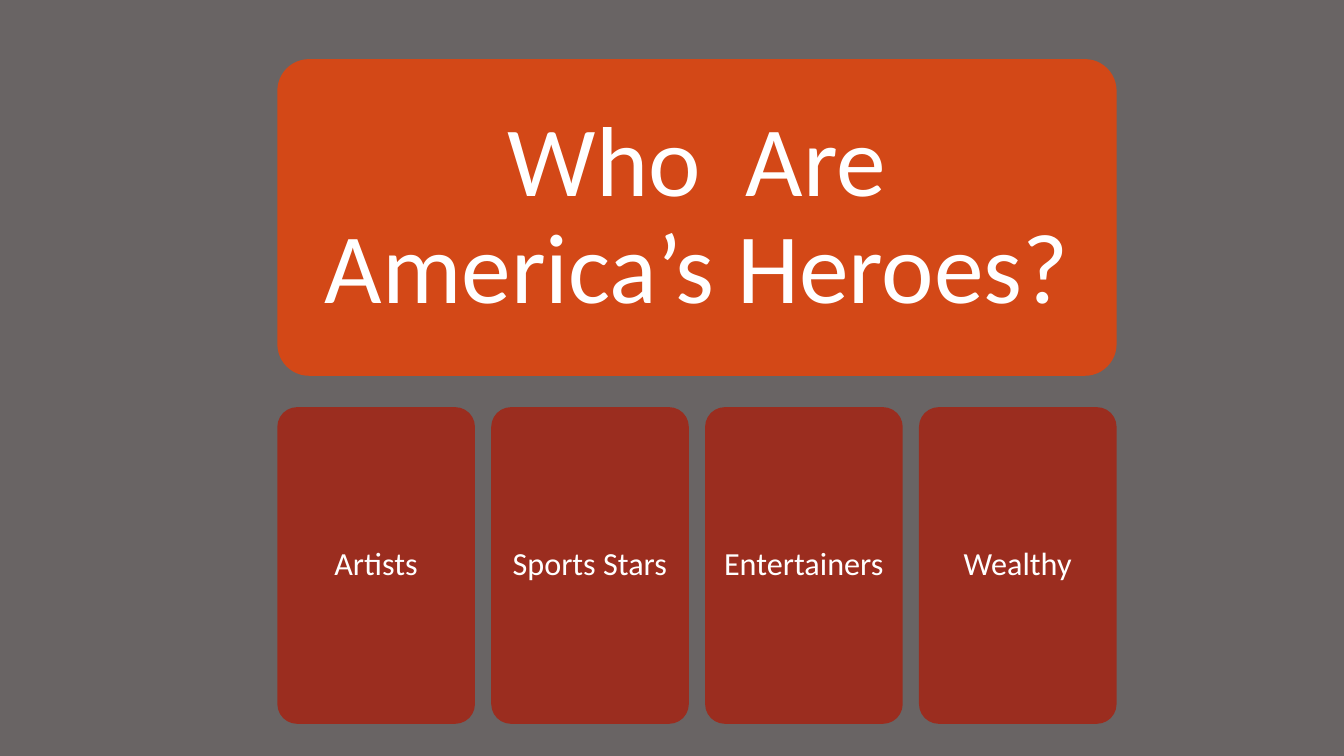
from pptx import Presentation
from pptx.dml.color import RGBColor
from pptx.enum import shapes, text
from pptx.util import Cm, Pt

TITLE = "Who  Are America’s Heroes?"
HEROES = ["Artists", "Sports Stars", "Entertainers", "Wealthy"]
COLORS = {"background": "696464", "banner": "D34817", "card": "9B2D1F", "text": "FFFFFF"}

LEFT, WIDTH, HEIGHT = 6.99, 21.15, 7.98
BANNER_TOP, CARD_TOP = 1.49, 10.26
GAP = 0.41
CARD_WIDTH = (WIDTH - GAP * (len(HEROES) - 1)) / len(HEROES)


def paint(fill, color):
    fill.solid()
    fill.fore_color.rgb = RGBColor.from_string(color)


def add_card(slide, left, top, width, color):
    shape = slide.shapes.add_shape(
        shapes.MSO_SHAPE.ROUNDED_RECTANGLE, Cm(left), Cm(top), Cm(width), Cm(HEIGHT))
    shape.adjustments[0] = 0.1
    shape.shadow.inherit = False
    shape.line.fill.background()
    paint(shape.fill, color)
    return shape


def write(shape, words, size, inset):
    frame = shape.text_frame
    frame.text = words
    frame.word_wrap = True
    frame.auto_size = text.MSO_AUTO_SIZE.NONE
    frame.vertical_anchor = text.MSO_ANCHOR.MIDDLE
    frame.margin_left = frame.margin_right = Cm(inset)
    frame.margin_top = frame.margin_bottom = Cm(inset)
    paragraph = frame.paragraphs[0]
    paragraph.alignment = text.PP_ALIGN.CENTER
    paragraph.line_spacing = 0.9
    paragraph.font.name = "Calibri"
    paragraph.font.size = Pt(size)
    paint(paragraph.font.fill, COLORS["text"])


def main():
    presentation = Presentation()
    presentation.slide_width, presentation.slide_height = Cm(33.87), Cm(19.05)
    slide = presentation.slides.add_slide(presentation.slide_layouts[5])
    paint(slide.background.fill, COLORS["background"])

    banner = add_card(slide, LEFT, BANNER_TOP, WIDTH, COLORS["banner"])
    title = slide.shapes.title
    title.left, title.top = banner.left, banner.top
    title.width, title.height = banner.width, banner.height
    banner.element.addnext(title.element)
    write(title, TITLE, 71, 1)

    for index, hero in enumerate(HEROES):
        left = LEFT + index * (CARD_WIDTH + GAP)
        card = add_card(slide, left, CARD_TOP, CARD_WIDTH, COLORS["card"])
        write(card, hero, 23, 0.2)

    presentation.save("out.pptx")


if __name__ == "__main__":
    main()
